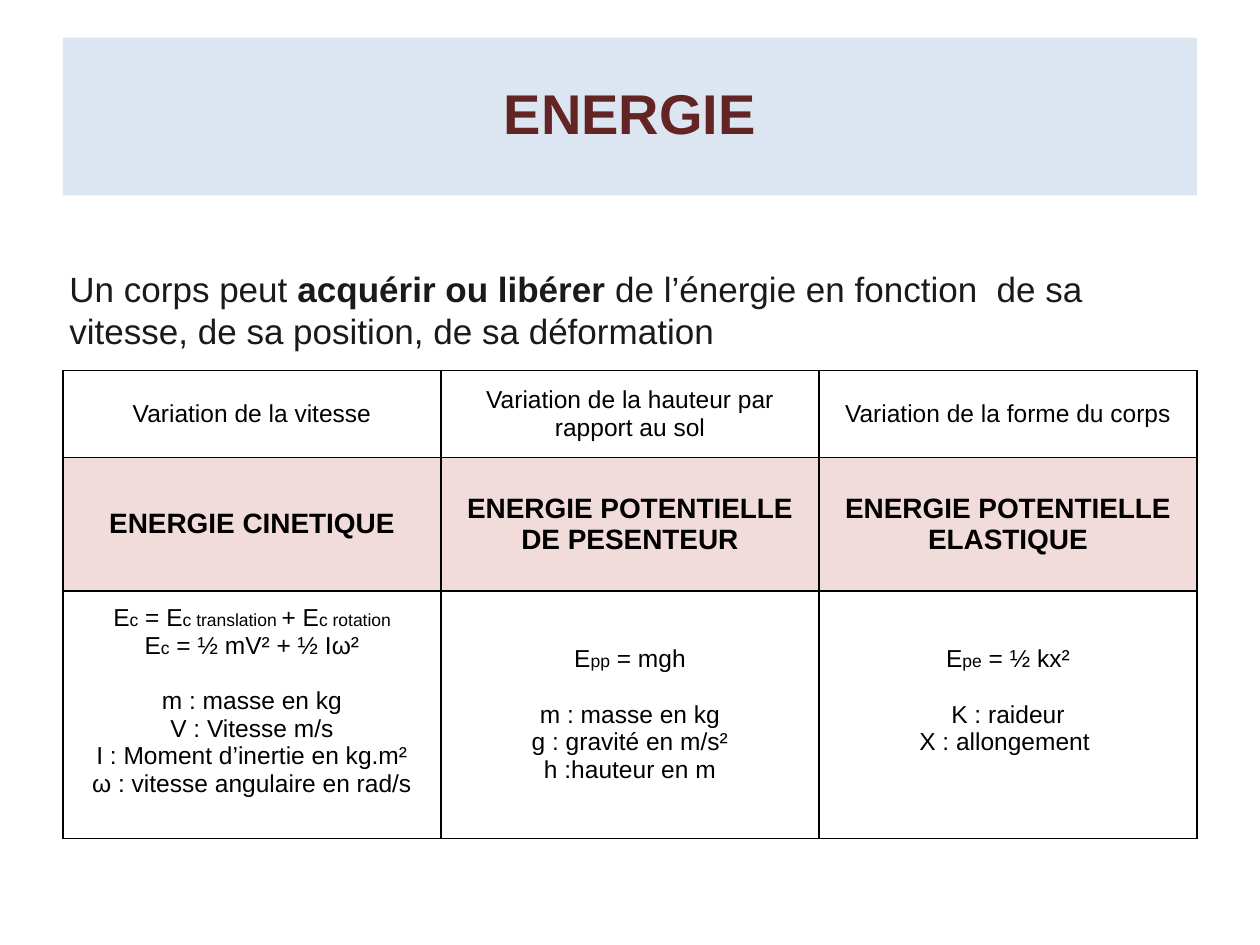
from dataclasses import dataclass

from lxml import etree
from pptx import Presentation
from pptx.dml.color import RGBColor
from pptx.enum.text import MSO_ANCHOR, PP_ALIGN
from pptx.oxml.ns import qn
from pptx.util import Cm, Pt

CENTER = PP_ALIGN.CENTER
MIDDLE = MSO_ANCHOR.MIDDLE


@dataclass(frozen=True)
class Theme:
    font: str = "Arial"
    banner: str = "DCE6F2"
    title: str = "632523"
    intro: str = "1A1A1A"
    ink: str = "000000"
    highlight: str = "F2DCDB"
    title_size: int = 32
    intro_size: int = 20
    name_size: int = 16
    body_size: int = 14
    index_size: int = 10
    border: int = 1
    group_gap: int = 16


THEME = Theme()


@dataclass(frozen=True)
class Run:
    text: str
    size: int = THEME.body_size
    bold: bool = False
    color: str = THEME.ink


@dataclass(frozen=True)
class Energy:
    cause: str
    name: str
    formulas: list[list[Run]]
    symbols: list[str]
    bottom_margin: float = 0.13


def index(text: str) -> Run:
    return Run(text, THEME.index_size)


ENERGIES = [
    Energy(
        "Variation de la vitesse",
        "ENERGIE CINETIQUE",
        [
            [Run("E"), index("c"), Run(" = E"), index("c translation "),
             Run("+ E"), index("c rotation")],
            [Run("E"), index("c"), Run(" = ½ mV² + ½ Iω²")],
        ],
        ["m : masse en kg", "V : Vitesse m/s", "I : Moment d’inertie en kg.m²",
         "ω : vitesse angulaire en rad/s"],
        bottom_margin=0.68,
    ),
    Energy(
        "Variation de la hauteur par rapport au sol",
        "ENERGIE POTENTIELLE DE PESENTEUR",
        [[Run("E"), index("pp"), Run(" = mgh")]],
        ["m : masse en kg", "g : gravité en m/s²", "h :hauteur en m"],
    ),
    Energy(
        "Variation de la forme du corps",
        "ENERGIE POTENTIELLE ELASTIQUE",
        [[Run("E"), index("pe"), Run(" = ½ kx²")]],
        ["K : raideur", "X : allongement "],
        bottom_margin=0.68,
    ),
]

INTRO = [
    Run("Un corps peut ", THEME.intro_size, color=THEME.intro),
    Run("acquérir ou libérer ", THEME.intro_size, True, THEME.intro),
    Run("de l’énergie en fonction  de sa vitesse, de sa position, de sa déformation",
        THEME.intro_size, color=THEME.intro),
]

LEFT, WIDTH = Cm(1.27), Cm(22.86)
ROW_HEIGHTS = [Cm(1.75), Cm(2.69), Cm(4.99)]


def write_lines(frame, lines: list[list[Run]], align=None) -> None:
    for number, line in enumerate(lines):
        paragraph = frame.add_paragraph() if number else frame.paragraphs[0]
        paragraph.alignment = align
        for part in line:
            run = paragraph.add_run()
            run.text = part.text
            run.font.name = THEME.font
            run.font.size = Pt(part.size)
            run.font.bold = part.bold
            run.font.color.rgb = RGBColor.from_string(part.color)


def add_text(slide, top: Cm, height: Cm, margin: Cm, line: list[Run], align=None):
    box = slide.shapes.add_textbox(LEFT, top, WIDTH, height)
    frame = box.text_frame
    frame.word_wrap = True
    frame.margin_left = frame.margin_right = margin
    frame.margin_top = frame.margin_bottom = margin
    write_lines(frame, [line], align)
    return box


def add_borders(cell) -> None:
    properties = cell._tc.get_or_add_tcPr()
    for position, side in enumerate(("a:lnL", "a:lnR", "a:lnT", "a:lnB")):
        border = etree.Element(qn(side), w=str(Pt(THEME.border)))
        fill = etree.SubElement(border, qn("a:solidFill"))
        etree.SubElement(fill, qn("a:srgbClr"), val=THEME.ink)
        properties.insert(position, border)


def fill_cell(cell, lines: list[list[Run]], fill: str | None = None) -> None:
    cell.vertical_anchor = MIDDLE
    if fill:
        cell.fill.solid()
        cell.fill.fore_color.rgb = RGBColor.from_string(fill)
    else:
        cell.fill.background()
    add_borders(cell)
    write_lines(cell.text_frame, lines, CENTER)


def add_energy_table(slide, energies: list[Energy]) -> None:
    table = slide.shapes.add_table(
        len(ROW_HEIGHTS), len(energies), LEFT, Cm(7.47), WIDTH, sum(ROW_HEIGHTS)
    ).table
    table.first_row = table.horz_banding = False
    for row, height in zip(table.rows, ROW_HEIGHTS):
        row.height = height
    for column, energy in enumerate(energies):
        cause, name, details = (table.cell(row, column) for row in range(3))
        fill_cell(cause, [[Run(energy.cause)]])
        fill_cell(name, [[Run(energy.name, THEME.name_size, True)]], THEME.highlight)
        symbols = [[Run(symbol)] for symbol in energy.symbols]
        fill_cell(details, energy.formulas + symbols)
        details.margin_bottom = Cm(energy.bottom_margin)
        first_symbol = details.text_frame.paragraphs[len(energy.formulas)]
        first_symbol.space_before = Pt(THEME.group_gap)


def main() -> None:
    deck = Presentation()
    deck.slide_width, deck.slide_height = Cm(25.4), Cm(19.05)
    slide = deck.slides.add_slide(deck.slide_layouts[6])

    heading = [Run("ENERGIE", THEME.title_size, True, THEME.title)]
    banner = add_text(slide, Cm(0.76), Cm(3.18), Cm(0), heading, CENTER)
    banner.fill.solid()
    banner.fill.fore_color.rgb = RGBColor.from_string(THEME.banner)
    banner.text_frame.vertical_anchor = MIDDLE
    banner.text_frame.paragraphs[0].line_spacing = 0.9

    add_text(slide, Cm(5.26), Cm(6.25), Cm(0.13), INTRO)
    add_energy_table(slide, ENERGIES)
    deck.save("out.pptx")


if __name__ == "__main__":
    main()
